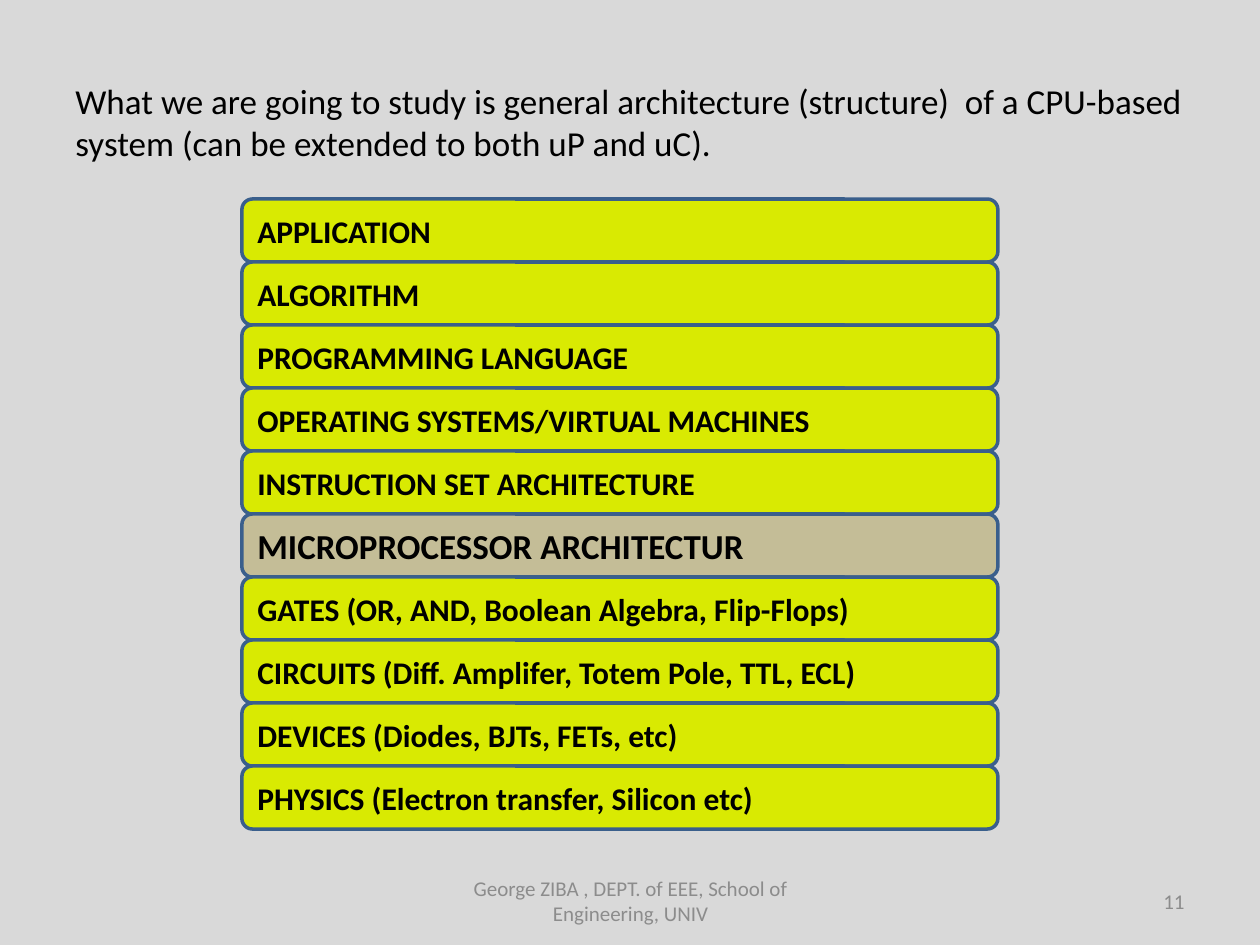
"""Build a slide showing the abstraction layers of a CPU-based system."""
from pptx import Presentation
from pptx.dml.color import RGBColor
from pptx.enum.shapes import MSO_SHAPE as Shape
from pptx.enum.text import MSO_ANCHOR as Anchor, PP_ALIGN as Align
from pptx.util import Inches, Pt

BACKGROUND = RGBColor(0xD9, 0xD9, 0xD9)
BLACK = RGBColor(0x00, 0x00, 0x00)
GRAY = RGBColor(0x8C, 0x8C, 0x8C)
LIME = RGBColor(0xD9, 0xEA, 0x02)
TAN = RGBColor(0xC4, 0xBD, 0x97)
BLUE = RGBColor(0x3A, 0x5F, 0x8C)

LAYER_LEFT, LAYER_TOP = Inches(1.92), Inches(1.58)
LAYER_WIDTH, ROW = Inches(6), Inches(0.5)
FOOTER_TOP, FOOTER_HEIGHT = Inches(6.95), Inches(0.4)
HIGHLIGHT = "MICROPROCESSOR ARCHITECTUR"
LAYERS = [
    "APPLICATION",
    "ALGORITHM",
    "PROGRAMMING LANGUAGE",
    "OPERATING SYSTEMS/VIRTUAL MACHINES",
    "INSTRUCTION SET ARCHITECTURE",
    HIGHLIGHT,
    "GATES (OR, AND, Boolean Algebra, Flip-Flops)",
    "CIRCUITS (Diff. Amplifer, Totem Pole, TTL, ECL)",
    "DEVICES (Diodes, BJTs, FETs, etc)",
    "PHYSICS (Electron transfer, Silicon etc)",
]


def write(shape, text, size, color=BLACK, align=Align.LEFT, anchor=Anchor.MIDDLE, bold=False):
    frame = shape.text_frame
    frame.word_wrap = True
    frame.vertical_anchor = anchor
    paragraph = frame.paragraphs[0]
    paragraph.alignment = align
    run = paragraph.add_run()
    run.text = text
    run.font.name = "Calibri"
    run.font.size = Pt(size)
    run.font.bold = bold
    run.font.color.rgb = color


presentation = Presentation()
presentation.slide_width = Inches(10)
presentation.slide_height = Inches(7.5)
slide = presentation.slides.add_slide(presentation.slide_layouts[6])
slide.background.fill.solid()
slide.background.fill.fore_color.rgb = BACKGROUND

footer = slide.shapes.add_textbox(Inches(3.42), FOOTER_TOP, Inches(3.17), FOOTER_HEIGHT)
write(footer, "George ZIBA , DEPT. of EEE, School of Engineering, UNIV", 12, GRAY, Align.CENTER)

page_number = slide.shapes.add_textbox(Inches(7.17), FOOTER_TOP, Inches(2.33), FOOTER_HEIGHT)
write(page_number, "11", 12, GRAY, Align.RIGHT)

introduction = slide.shapes.add_textbox(Inches(0.5), Inches(0.58), Inches(9), Inches(0.77))
write(
    introduction,
    "What we are going to study is general architecture (structure)  of a CPU-based "
    "system (can be extended to both uP and uC).",
    20,
    anchor=Anchor.TOP,
)

for row, label in enumerate(LAYERS):
    layer = slide.shapes.add_shape(
        Shape.ROUNDED_RECTANGLE, LAYER_LEFT, LAYER_TOP + row * ROW, LAYER_WIDTH, ROW
    )
    layer.shadow.inherit = False
    layer.fill.solid()
    layer.fill.fore_color.rgb = TAN if label == HIGHLIGHT else LIME
    layer.line.color.rgb = BLUE
    layer.line.width = Pt(2)
    write(layer, label, 20 if label == HIGHLIGHT else 18, bold=True)

presentation.save("out.pptx")
